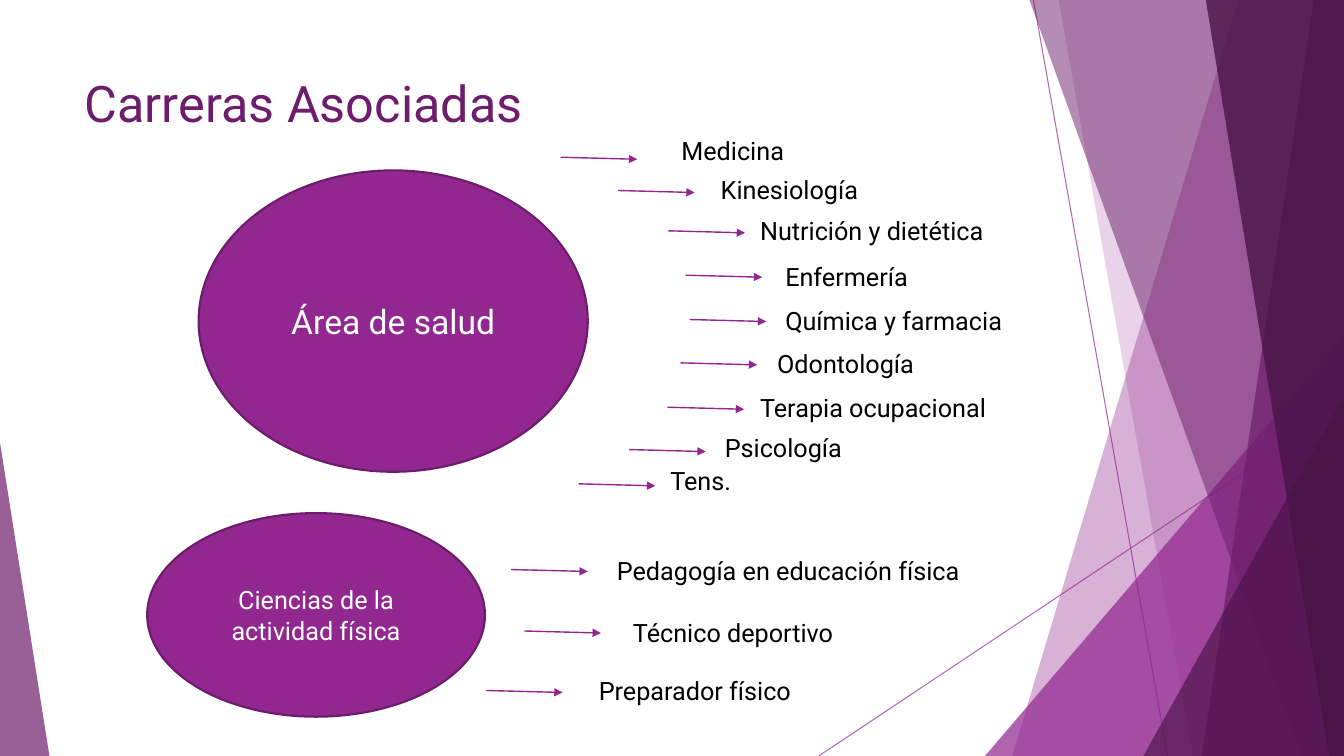
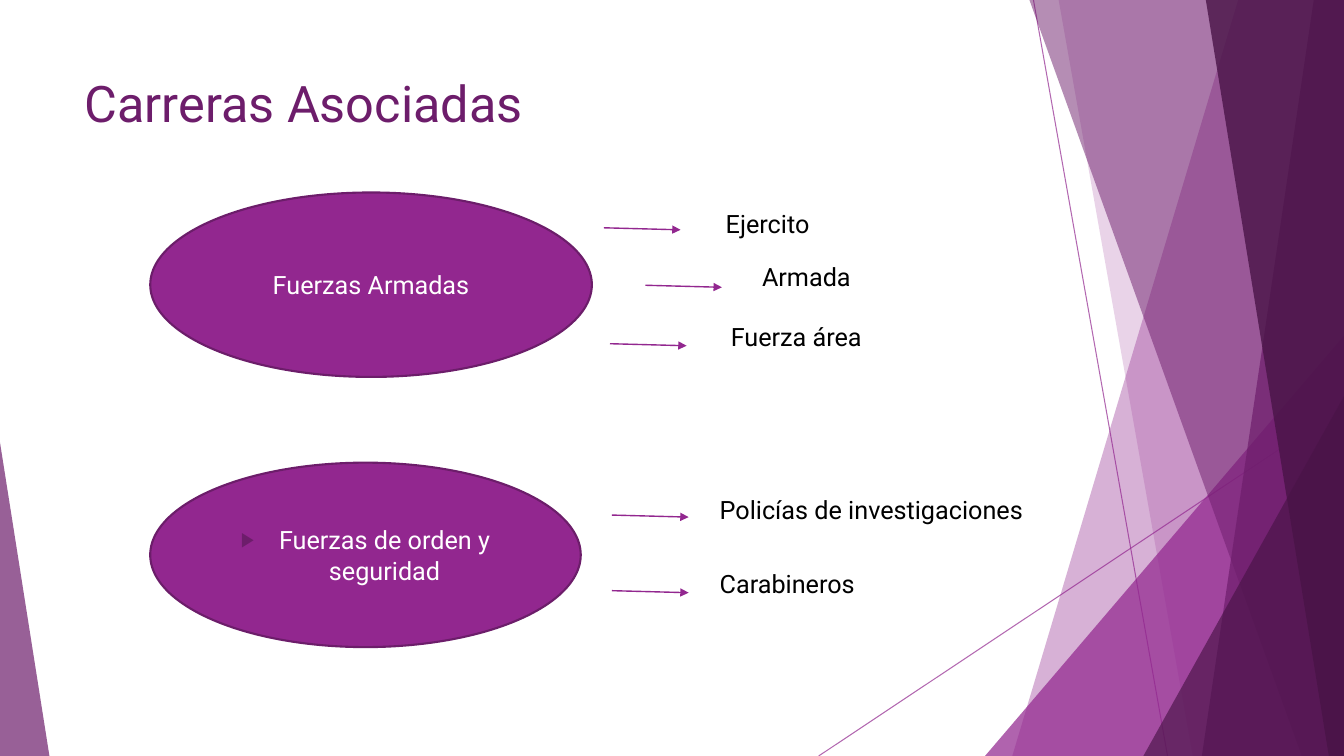
from lxml import etree
from pptx import Presentation
from pptx import util as u
from pptx.dml.color import RGBColor
from pptx.enum import shapes, text
from pptx.oxml.ns import qn

W, H = 13.33, 7.5
FONT = "Roboto"
C = {"purple": "92278F", "plum": "6D1D6B", "dark": "491447",
     "outline": "6C1D6A", "white": "FFFFFF", "black": "000000"}
ARROW_W, ARROW_DROP = 0.76, 0.02
LABEL_H = 0.4

# Decoration, back to front: top-left x, bottom-left x, bottom-right x fixed at W
BACK_BANDS = [(12.28, 10.04, W, "purple", 36), (10.5, 11.83, W, "purple", 20)]
FRONT_BANDS = [(10.21, 12.91, W, "plum", 50), (13.03, 11.92, W, "plum", 70),
               (11.96, 13.18, W, "dark", 80)]

# Careers: text, arrow offset, label offset (both from the ellipse's corner), label width
HEALTH = [
    ("Medicina", (3.59, -0.13), (4.69, -0.4), 2.25),
    ("Kinesiología", (4.16, 0.2), (5.08, -0.01), 2),
    ("Nutrición y dietética", (4.66, 0.6), (5.47, 0.4), 2.72),
    ("Enfermería", (4.83, 1.04), (5.72, 0.85), 2.25),
    ("Química y farmacia", (4.87, 1.48), (5.72, 1.29), 3.04),
    ("Odontología", (4.78, 1.91), (5.64, 1.72), 3.27),
    ("Terapia ocupacional", (4.65, 2.35), (5.47, 2.15), 3.71),
    ("Psicología", (4.27, 2.77), (5.12, 2.55), 2.59),
    ("Tens.", (3.77, 3.11), (4.58, 2.88), 2.36),
]
SPORT = [
    ("Pedagogía en educación física", (3.61, 0.56), (4.56, 0.37), 3.91),
    ("Técnico deportivo", (3.74, 1.17), (4.72, 0.99), 3.4),
    ("Preparador físico", (3.36, 1.76), (4.38, 1.56), 2.45),
]
ARMED = [
    ("Ejercito", (4.5, 0.35), (5.61, 0.11), 2),
    ("Armada", (4.91, 0.92), (5.97, 0.63), 2),
    ("Fuerza área", (4.56, 1.5), (5.66, 1.23), 1.94),
]
ORDER = [
    ("Policías de investigaciones", (4.58, 0.52), (5.55, 0.27), 3.33),
    ("Carabineros", (4.58, 1.27), (5.55, 1), 2),
]
SLIDES = [
    [dict(box=(1.97, 1.69, 3.86, 2.99), area="Área de salud", careers=HEALTH, size=24),
     dict(box=(1.46, 5.09, 3.35, 2.02), area="Ciencias de la actividad física",
          careers=SPORT)],
    [dict(box=(1.49, 1.91, 4.38, 1.83), area="Fuerzas Armadas", careers=ARMED),
     dict(box=(1.49, 4.59, 4.27, 1.83), area="Fuerzas de orden y seguridad",
          careers=ORDER, bullet=True)],
]


def rgb(name):
    return RGBColor.from_string(C[name])


def inches(*values):
    return [u.Inches(v) for v in values]


def set_alpha(parent, percent):
    color = next(parent.iter(qn("a:srgbClr")))
    etree.SubElement(color, qn("a:alpha"), val=str(percent * 1000))


def add_bullet(p):
    pPr = p._p.get_or_add_pPr()
    pPr.set("marL", str(u.Inches(0.38)))
    pPr.set("indent", str(-u.Inches(0.38)))
    color = etree.SubElement(pPr, qn("a:buClr"))
    etree.SubElement(color, qn("a:srgbClr"), val=C["plum"])
    etree.SubElement(pPr, qn("a:buSzPct"), val="80000")
    etree.SubElement(pPr, qn("a:buFont"), typeface="Arial")
    etree.SubElement(pPr, qn("a:buChar"), char="▶")


def write(tf, content, size=18, color="black", align=text.PP_ALIGN.LEFT,
          anchor=text.MSO_ANCHOR.TOP, bullet=False):
    tf.word_wrap = True
    tf.vertical_anchor = anchor
    p = tf.paragraphs[0]
    p.alignment = align
    if bullet:
        add_bullet(p)
    r = p.add_run()
    r.text = content
    r.font.name, r.font.size, r.font.color.rgb = FONT, u.Pt(size), rgb(color)


def add_label(s, box, content, **fmt):
    write(s.shapes.add_textbox(*inches(*box)).text_frame, content, **fmt)


def add_line(s, start, end, width, alpha=None, arrow=False):
    cx = s.shapes.add_connector(shapes.MSO_CONNECTOR.STRAIGHT, *inches(*start, *end))
    cx.line.color.rgb, cx.line.width = rgb("purple"), u.Pt(width)
    ln = cx.line._get_or_add_ln()
    if alpha:
        set_alpha(ln, alpha)
    if arrow:
        etree.SubElement(ln, qn("a:tailEnd"), type="triangle")
    etree.SubElement(cx._element.spPr, qn("a:effectLst"))


def paint(sp, color, alpha):
    sp.shadow.inherit = False
    sp.fill.solid()
    sp.fill.fore_color.rgb = rgb(color)
    set_alpha(sp._element.spPr, alpha)
    sp.line.fill.background()


def add_band(s, top_left, bottom_left, right, color, alpha):
    """Full-height band running from a slanted left edge to the right edge."""
    fb = s.shapes.build_freeform(*inches(top_left, 0))
    fb.add_line_segments([inches(right, 0), inches(right, H), inches(bottom_left, H)])
    paint(fb.convert_to_shape(), color, alpha)


def add_triangle(s, left, top, right, apex, color, alpha):
    """Triangle standing on the slide's bottom edge."""
    sp = s.shapes.add_shape(shapes.MSO_SHAPE.ISOSCELES_TRIANGLE,
                            *inches(left, top, right - left, H - top))
    sp.adjustments[0] = apex
    paint(sp, color, alpha)


def add_decoration(s):
    add_line(s, (10.25, 0), (11.58, H), 0.75, alpha=70)
    add_line(s, (W, 4.03), (8.12, H), 0.75, alpha=70)
    for band in BACK_BANDS:
        add_band(s, *band)
    add_triangle(s, 9.77, 3.33, W, 1, "purple", 72)
    for band in FRONT_BANDS:
        add_band(s, *band)
    add_triangle(s, 11.34, 3.93, W, 1, "dark", 66)
    add_triangle(s, 0, 4.39, 0.49, 0, "plum", 70)


def add_area(s, box, area, careers, size=18, bullet=False):
    """Ellipse filling the box, with an arrow and a label for each career."""
    sp = s.shapes.add_shape(shapes.MSO_SHAPE.OVAL, *inches(*box))
    sp.shadow.inherit = False
    sp.fill.solid()
    sp.fill.fore_color.rgb = rgb("purple")
    sp.line.color.rgb, sp.line.width = rgb("outline"), u.Pt(1.5)
    write(sp.text_frame, area, size=size, color="white", bullet=bullet,
          align=text.PP_ALIGN.CENTER, anchor=text.MSO_ANCHOR.MIDDLE)
    x, y = box[:2]
    for career, (ax, ay), (lx, ly), width in careers:
        add_line(s, (x + ax, y + ay), (x + ax + ARROW_W, y + ay + ARROW_DROP), 1,
                 arrow=True)
        add_label(s, (x + lx, y + ly, width, LABEL_H), career)


def add_careers_slide(prs, areas):
    s = prs.slides.add_slide(prs.slide_layouts[6])
    add_decoration(s)
    add_label(s, (0.74, 0.67, 9.4, 1.44), "Carreras Asociadas", size=36, color="plum")
    for area in areas:
        add_area(s, **area)


def main():
    prs = Presentation()
    prs.slide_width, prs.slide_height = inches(W, H)
    for areas in SLIDES:
        add_careers_slide(prs, areas)
    prs.save("out.pptx")


if __name__ == "__main__":
    main()
